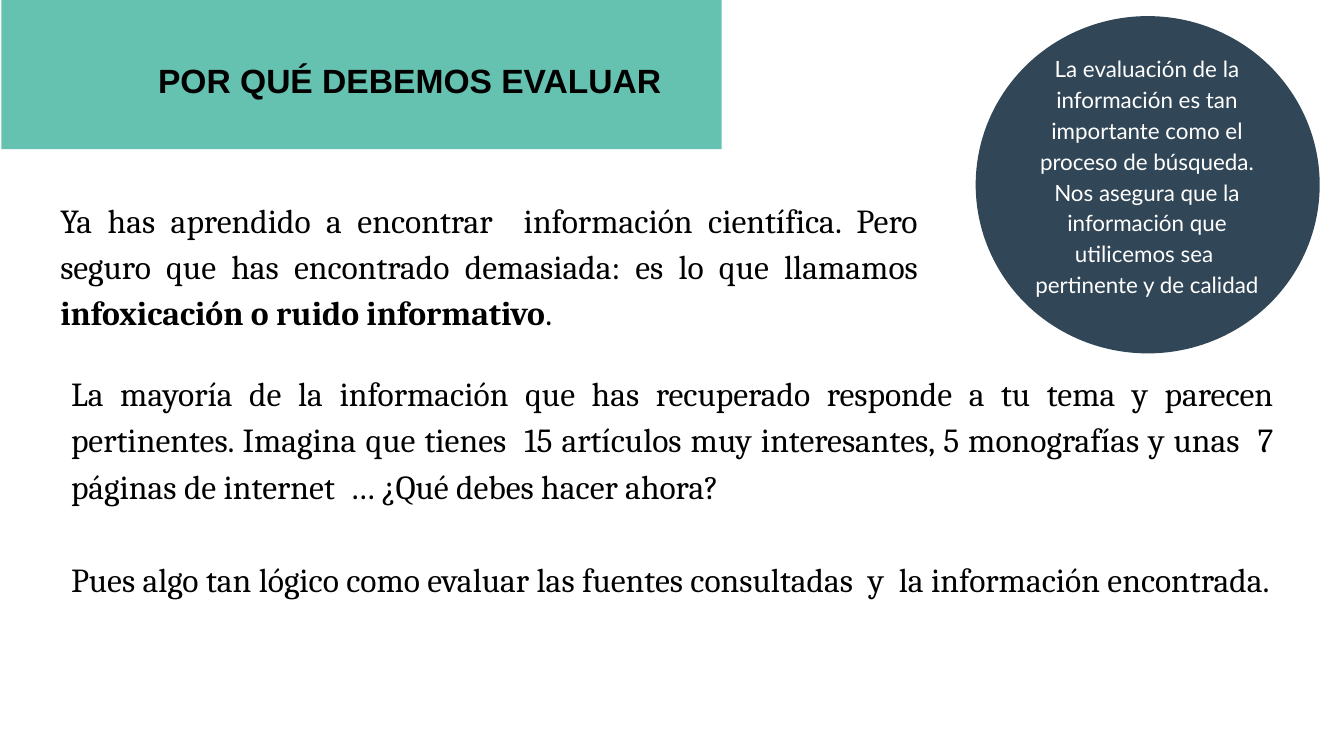
from dataclasses import dataclass

from pptx import Presentation
from pptx.dml.color import RGBColor
from pptx.enum.shapes import MSO_SHAPE
from pptx.enum.text import MSO_ANCHOR, PP_ALIGN
from pptx.util import Inches, Pt

RECT, OVAL = MSO_SHAPE.RECTANGLE, MSO_SHAPE.OVAL
TOP, MIDDLE = MSO_ANCHOR.TOP, MSO_ANCHOR.MIDDLE
RIGHT, CENTER, JUSTIFY = PP_ALIGN.RIGHT, PP_ALIGN.CENTER, PP_ALIGN.JUSTIFY
WIDTH = 10
HEIGHT = WIDTH * 9 / 16


@dataclass(frozen=True)
class Theme:
    teal: str = "65C1B0"
    navy: str = "314656"
    black: str = "000000"
    white: str = "FFFFFF"
    head: str = "Arial"
    body: str = "Cambria"
    note: str = "Lato"
    large: int = 18
    small: int = 12
    line: float = 1.15
    gap: int = 25


@dataclass(frozen=True)
class Box:
    left: float
    top: float
    width: float
    height: float

    def place(self) -> list:
        return [Inches(v) for v in (self.left, self.top, self.width, self.height)]


@dataclass(frozen=True)
class Run:
    text: str
    bold: bool = False


THEME = Theme()


def add_block(slide, kind, box: Box, color: str) -> None:
    """Draw a plain filled shape."""
    shape = slide.shapes.add_shape(kind, *box.place())
    shape.shadow.inherit = False
    shape.fill.solid()
    shape.fill.fore_color.rgb = RGBColor.from_string(color)
    shape.line.fill.background()


def add_text(slide, box: Box, paras: list[list[Run]], *, font: str = THEME.body,
             size: int = THEME.large, color: str = THEME.black,
             align=JUSTIFY, anchor=TOP, gap: int = 0) -> None:
    """Write paragraphs, each a list of runs, with gap points between them."""
    frame = slide.shapes.add_textbox(*box.place()).text_frame
    frame.word_wrap = True
    frame.vertical_anchor = anchor
    frame.margin_left = frame.margin_right = Inches(0.1)
    frame.margin_top = frame.margin_bottom = Inches(0.1)
    for i, runs in enumerate(paras):
        para = frame.add_paragraph() if i else frame.paragraphs[0]
        para.alignment = align
        para.line_spacing = THEME.line
        para.space_before = Pt(gap if i else 0)
        for item in runs:
            run = para.add_run()
            run.text = item.text
            run.font.name = font
            run.font.size = Pt(size)
            run.font.bold = item.bold
            run.font.color.rgb = RGBColor.from_string(color)


def main() -> None:
    deck = Presentation()
    deck.slide_width, deck.slide_height = Inches(WIDTH), Inches(HEIGHT)
    slide = deck.slides.add_slide(deck.slide_layouts[6])

    # Title band
    add_block(slide, RECT, Box(0.01, 0, 5.36, 1.11), THEME.teal)
    add_text(slide, Box(0.03, 0.04, 4.99, 1.07),
             [[Run("POR QUÉ DEBEMOS EVALUAR", bold=True)]],
             font=THEME.head, align=RIGHT, anchor=MIDDLE)

    # Opening text
    add_text(slide, Box(0.35, 1.34, 6.58, 1.11), [[
        Run("Ya has aprendido a encontrar  información científica. Pero seguro "
            "que has encontrado demasiada: es lo que llamamos "),
        Run("infoxicación o ruido informativo", bold=True),
        Run("."),
    ]])

    # Round note
    add_block(slide, OVAL, Box(7.26, 0.12, 2.56, 2.51), THEME.navy)
    add_text(slide, Box(7.5, 0.28, 2.07, 2.3), [
        [Run("La evaluación de la información es tan importante como el "
             "proceso de búsqueda.")],
        [Run("Nos asegura que la información que utilicemos sea  pertinente "
             "y de calidad")],
    ], font=THEME.note, size=THEME.small, color=THEME.white, align=CENTER)

    # Main text
    add_text(slide, Box(0.43, 2.63, 9.15, 2.51), [
        [Run("La mayoría de la información que has recuperado responde a tu "
             "tema y parecen pertinentes. Imagina que tienes  15 artículos muy "
             "interesantes, 5 monografías y unas  7 páginas de internet  … "
             "¿Qué debes hacer ahora?")],
        [Run("Pues algo tan lógico como evaluar las fuentes consultadas  y  "
             "la información encontrada.")],
    ], gap=THEME.gap)

    deck.save("out.pptx")


if __name__ == "__main__":
    main()
